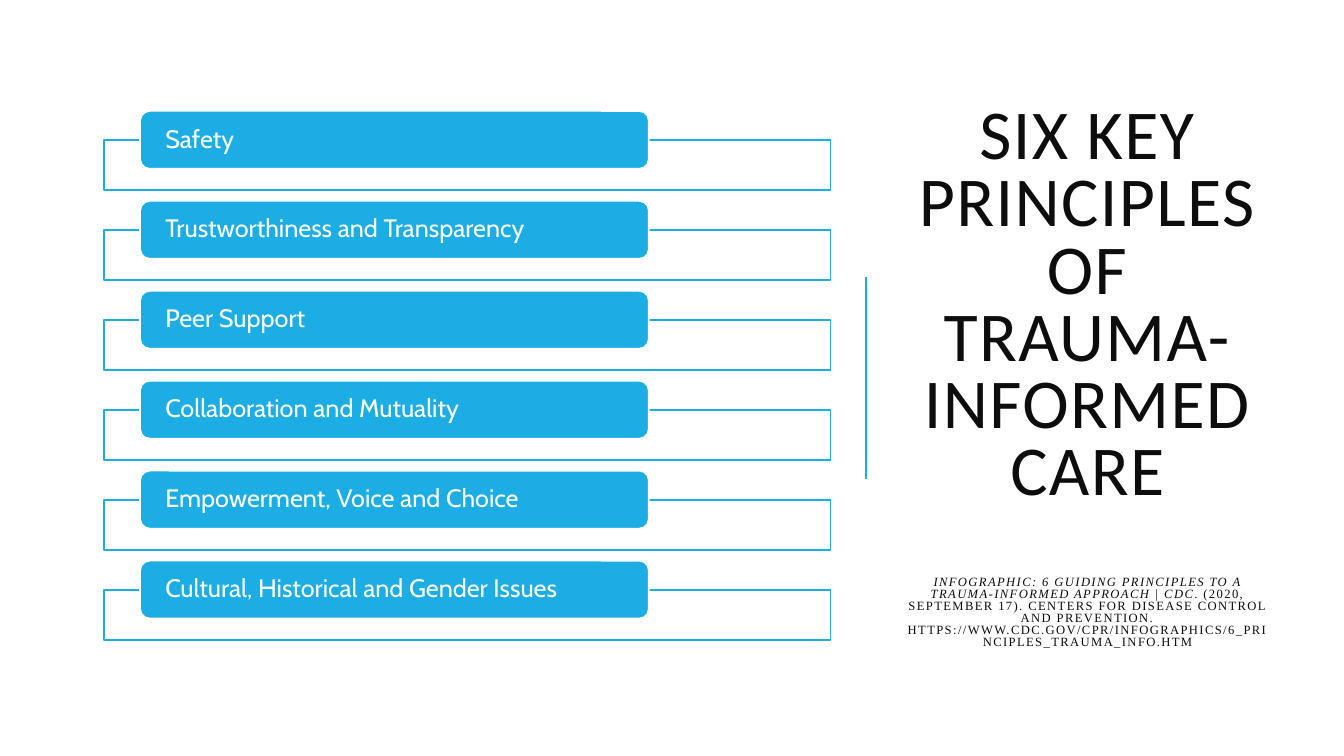
from lxml import etree
from pptx import Presentation
from pptx import util as u
from pptx.dml.color import RGBColor
from pptx.enum import shapes, text
from pptx.oxml import ns

BLUE = RGBColor(0x1C, 0xAD, 0xE4)
WHITE = RGBColor(0xFF, 0xFF, 0xFF)
INK = RGBColor(0x0D, 0x0D, 0x0D)

PRINCIPLES = [
    "Safety",
    "Trustworthiness and Transparency",
    "Peer Support",
    "Collaboration and Mutuality",
    "Empowerment, Voice and Choice",
    "Cultural, Historical and Gender Issues",
]
TITLE = "SIX KEY PRINCIPLES OF TRAUMA-INFORMED CARE"
SOURCE_TITLE = "INFOGRAPHIC: 6 GUIDING PRINCIPLES TO A TRAUMA-INFORMED APPROACH | CDC"
SOURCE_DETAILS = (
    ". (2020, SEPTEMBER 17). CENTERS FOR DISEASE CONTROL AND PREVENTION. "
    "HTTPS://WWW.CDC.GOV/CPR/INFOGRAPHICS/6_PRINCIPLES_TRAUMA_INFO.HTM"
)

FIRST_TOP = 79.2
ROW_PITCH = 64.25
FRAME_DROP = 20.8

TITLE_FONT = {"name": "Calibri", "size": u.Pt(50)}
SOURCE_FONT = {"name": "Times New Roman", "size": u.Pt(9)}
PILL_FONT = {"name": "Cabin", "size": u.Pt(18)}


def set_all(target, values):
    for name, value in values.items():
        setattr(target, name, value)


def add_span(para, words, color, font, tracking=0):
    """Add a run; tracking is the letter spacing in hundredths of a point."""
    span = para.add_run()
    span.text = words
    set_all(span.font, font)
    span.font.color.rgb = color
    if tracking:
        span.font._element.set("spc", str(tracking))


def add_box(page, kind, bounds, fill, line):
    box = page.shapes.add_shape(kind, *map(u.Pt, bounds))
    box.shadow.inherit = False
    box.fill.solid()
    box.fill.fore_color.rgb = fill
    box.line.color.rgb = line
    box.line.width = u.Pt(1.25)
    return box


def set_opacity(box, percent):
    color = box._element.spPr.find(ns.qn("a:solidFill"))[0]
    etree.SubElement(color, ns.qn("a:alpha")).set("val", str(percent * 1000))


def add_principle(page, top, words):
    frame = add_box(page, shapes.MSO_SHAPE.RECTANGLE,
                    (74.2, top + FRAME_DROP, 519, 36), WHITE, BLUE)
    set_opacity(frame, 90)
    pill = add_box(page, shapes.MSO_SHAPE.ROUNDED_RECTANGLE,
                   (100.1, top, 363.4, 41.4), BLUE, WHITE)
    set_all(pill.text_frame, {
        "word_wrap": True,
        "vertical_anchor": text.MSO_ANCHOR.MIDDLE,
        "margin_left": u.Pt(16), "margin_right": u.Pt(16),
        "margin_top": 0, "margin_bottom": 0,
    })
    para = pill.text_frame.paragraphs[0]
    set_all(para, {"alignment": text.PP_ALIGN.LEFT, "line_spacing": 0.9})
    add_span(para, words, WHITE, PILL_FONT)


def add_divider(page):
    line = page.shapes.add_connector(
        shapes.MSO_CONNECTOR.STRAIGHT, *map(u.Pt, (618.5, 342, 618.5, 198)))
    line.line.color.rgb = BLUE
    line.line.width = u.Pt(1.5)
    etree.SubElement(line._element.spPr, ns.qn("a:effectLst"))


def add_title(page):
    box = page.shapes.add_textbox(*map(u.Pt, (640, 50.4, 273.6, 438.5)))
    frame = box.text_frame
    set_all(frame, {"word_wrap": True, "vertical_anchor": text.MSO_ANCHOR.MIDDLE})
    heading, source = frame.paragraphs[0], frame.add_paragraph()
    for para in (heading, source):
        set_all(para, {"alignment": text.PP_ALIGN.CENTER, "line_spacing": 0.8})
    source.space_before = u.Pt(48)
    add_span(heading, TITLE, INK, TITLE_FONT, 100)
    add_span(source, SOURCE_TITLE, INK, SOURCE_FONT | {"italic": True}, 100)
    add_span(source, SOURCE_DETAILS, INK, SOURCE_FONT, 100)


def main():
    deck = Presentation()
    set_all(deck, {"slide_width": u.Pt(960), "slide_height": u.Pt(540)})
    page = deck.slides.add_slide(deck.slide_layouts[6])
    add_title(page)
    add_divider(page)
    for row, words in enumerate(PRINCIPLES):
        add_principle(page, FIRST_TOP + row * ROW_PITCH, words)
    deck.save("out.pptx")


if __name__ == "__main__":
    main()
